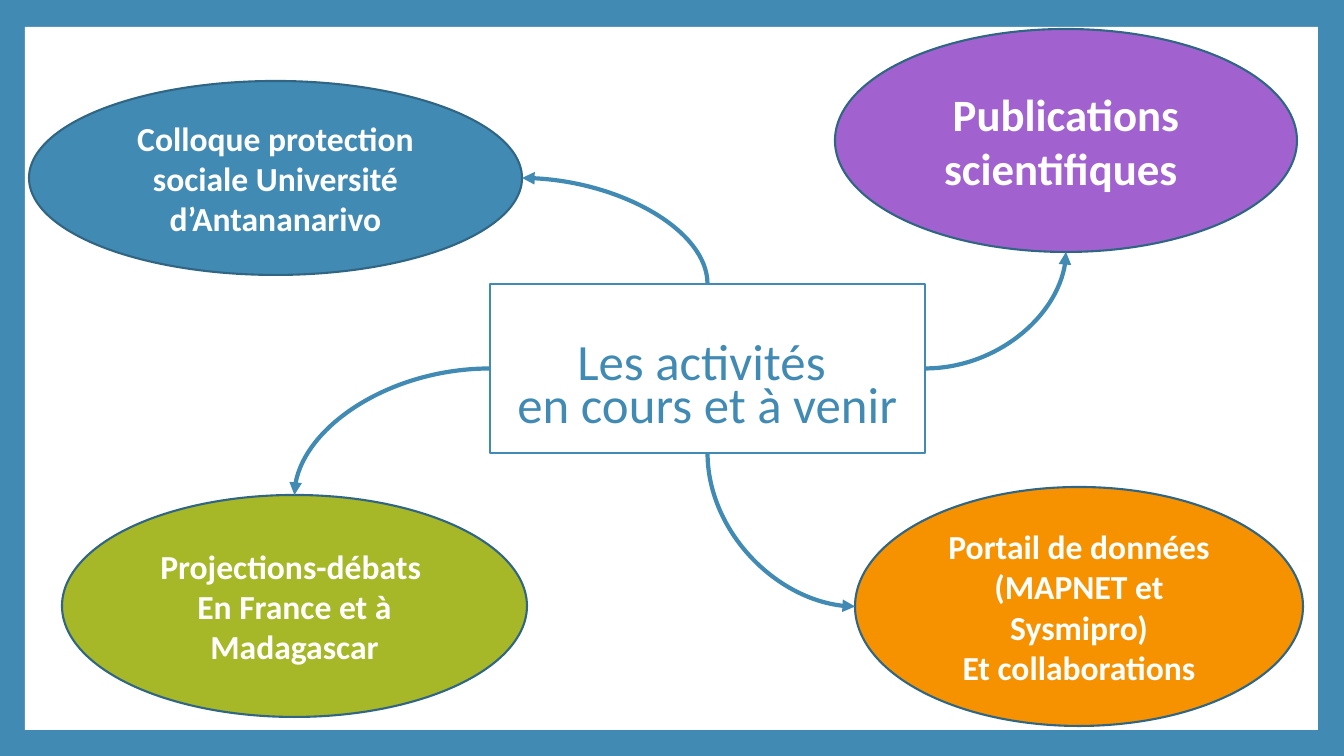
"""Build the slide that maps current and upcoming activities around a central title."""
from dataclasses import dataclass
from enum import Enum

from lxml.etree import SubElement
from pptx import Presentation
from pptx.dml.color import RGBColor
from pptx.enum.shapes import MSO_CONNECTOR as Connector, MSO_SHAPE as Shape
from pptx.enum.text import MSO_ANCHOR as Anchor, MSO_AUTO_SIZE as AutoSize, PP_ALIGN as Align
from pptx.oxml.ns import qn
from pptx.slide import Slide
from pptx.util import Emu, Pt

PX_PER_INCH = 100.8
FONT = "Calibri"
WHITE = RGBColor(0xFF, 0xFF, 0xFF)
BLUE = RGBColor(0x41, 0x8A, 0xB3)
DARK_BLUE = RGBColor(0x30, 0x66, 0x84)
GREEN = RGBColor(0xA6, 0xB7, 0x27)
PURPLE = RGBColor(0xA1, 0x62, 0xD0)
ORANGE = RGBColor(0xF6, 0x92, 0x00)


class Side(Enum):
    TOP = (0, -1)
    LEFT = (-1, 0)
    BOTTOM = (0, 1)
    RIGHT = (1, 0)


@dataclass(frozen=True)
class Box:
    left: int
    top: int
    width: int
    height: int

    def emu(self) -> tuple[Emu, Emu, Emu, Emu]:
        return px(self.left), px(self.top), px(self.width), px(self.height)

    def middle(self, side: Side) -> tuple[float, float]:
        across, down = side.value
        return (self.left + self.width * (1 + across) / 2,
                self.top + self.height * (1 + down) / 2)


@dataclass(frozen=True)
class Activity:
    paragraphs: tuple[str, ...]
    box: Box
    color: RGBColor
    leaves_title: Side
    enters: Side
    size: int = 24


FRAME = Box(25, 27, 1293, 703)
TITLE = Box(490, 284, 435, 169)
ACTIVITIES = (
    Activity(("Projections-débats \vEn France et à Madagascar",),
             Box(62, 495, 465, 222), GREEN, Side.LEFT, Side.TOP),
    Activity(("Publications scientifiques ",),
             Box(835, 29, 462, 223), PURPLE, Side.RIGHT, Side.BOTTOM, 32),
    Activity(("Colloque protection sociale Université d’Antananarivo",),
             Box(29, 81, 493, 194), BLUE, Side.TOP, Side.RIGHT),
    Activity(("Portail de données (MAPNET et Sysmipro)", "Et collaborations"),
             Box(855, 487, 448, 239), ORANGE, Side.BOTTOM, Side.LEFT),
)


def px(length: float) -> Emu:
    return Emu(round(length * 914400 / PX_PER_INCH))


def add_frame(slide: Slide) -> None:
    frame = slide.shapes.add_shape(Shape.RECTANGLE, *FRAME.emu())
    frame.shadow.inherit = False
    frame.fill.solid()
    frame.fill.fore_color.rgb = WHITE
    frame.line.fill.background()
    tree = slide.shapes.title.element.getparent()
    tree.remove(frame.element)
    slide.shapes.title.element.addprevious(frame.element)


def format_title(slide: Slide) -> None:
    title = slide.shapes.title
    title.left, title.top, title.width, title.height = TITLE.emu()
    title.line.color.rgb = BLUE
    title.line.width = Pt(2)
    text_frame = title.text_frame
    text_frame.text = "Les activités \ven cours et à venir"
    text_frame.auto_size = AutoSize.NONE
    text_frame.vertical_anchor = Anchor.MIDDLE
    text_frame.margin_top = px(46)
    paragraph = text_frame.paragraphs[0]
    paragraph.alignment = Align.CENTER
    paragraph.line_spacing = 0.7
    paragraph.space_before = Pt(0)
    paragraph.font.name = FONT
    paragraph.font.size = Pt(36.3)
    paragraph.font.color.rgb = BLUE


def add_ellipse(slide: Slide, activity: Activity) -> None:
    ellipse = slide.shapes.add_shape(Shape.OVAL, *activity.box.emu())
    ellipse.shadow.inherit = False
    ellipse.fill.solid()
    ellipse.fill.fore_color.rgb = activity.color
    ellipse.line.color.rgb = DARK_BLUE
    ellipse.line.width = Pt(1.5)
    text_frame = ellipse.text_frame
    text_frame.word_wrap = True
    text_frame.vertical_anchor = Anchor.MIDDLE
    text_frame.text = "\n".join(activity.paragraphs)
    for paragraph in text_frame.paragraphs:
        paragraph.alignment = Align.CENTER
        paragraph.font.name = FONT
        paragraph.font.size = Pt(activity.size)
        paragraph.font.bold = True
        paragraph.font.color.rgb = WHITE


def add_arrow(slide: Slide, activity: Activity) -> None:
    begin_x, begin_y = TITLE.middle(activity.leaves_title)
    end_x, end_y = activity.box.middle(activity.enters)
    starts_upright = activity.leaves_title in (Side.TOP, Side.BOTTOM)
    if starts_upright:
        center_x, center_y = (begin_x + end_x) / 2, (begin_y + end_y) / 2
        half_x, half_y = (begin_y - end_y) / 2, (end_x - begin_x) / 2
        begin_x, end_x = center_x - half_x, center_x + half_x
        begin_y, end_y = center_y - half_y, center_y + half_y
    arrow = slide.shapes.add_connector(
        Connector.CURVE, px(begin_x), px(begin_y), px(end_x), px(end_y))
    arrow.line.color.rgb = BLUE
    arrow.line.width = Pt(3)
    properties = arrow.element.spPr
    properties.find(qn("a:prstGeom")).set("prst", "curvedConnector2")
    if starts_upright:
        properties.find(qn("a:xfrm")).set("rot", str(270 * 60000))
    SubElement(properties.find(qn("a:ln")), qn("a:tailEnd"), type="triangle")
    SubElement(properties, qn("a:effectLst"))


def main() -> None:
    presentation = Presentation()
    presentation.slide_width, presentation.slide_height = px(1344), px(756)
    slide = presentation.slides.add_slide(presentation.slide_layouts[5])
    slide.background.fill.solid()
    slide.background.fill.fore_color.rgb = BLUE
    add_frame(slide)
    format_title(slide)
    for activity in ACTIVITIES:
        add_ellipse(slide, activity)
        add_arrow(slide, activity)
    presentation.save("out.pptx")


if __name__ == "__main__":
    main()
